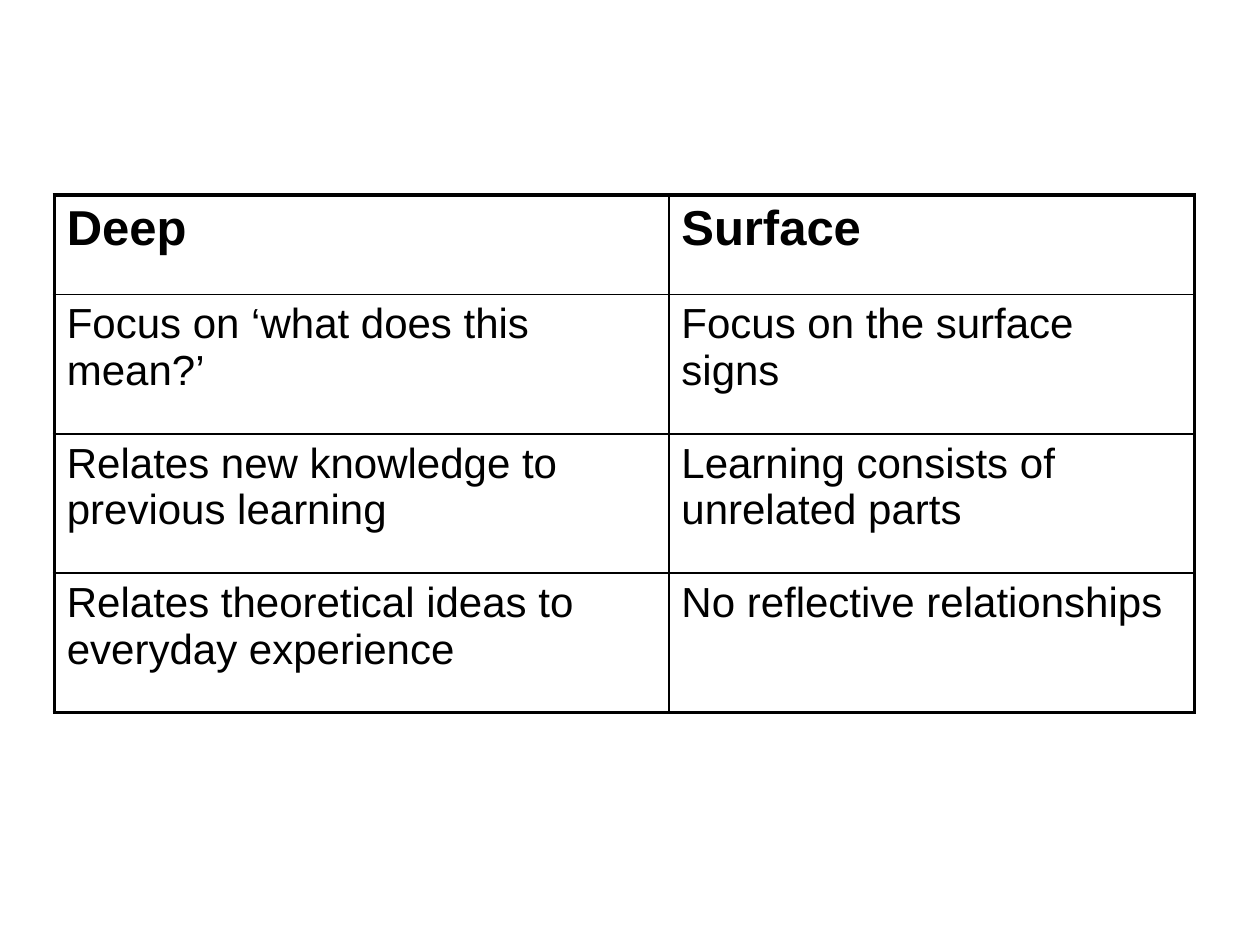
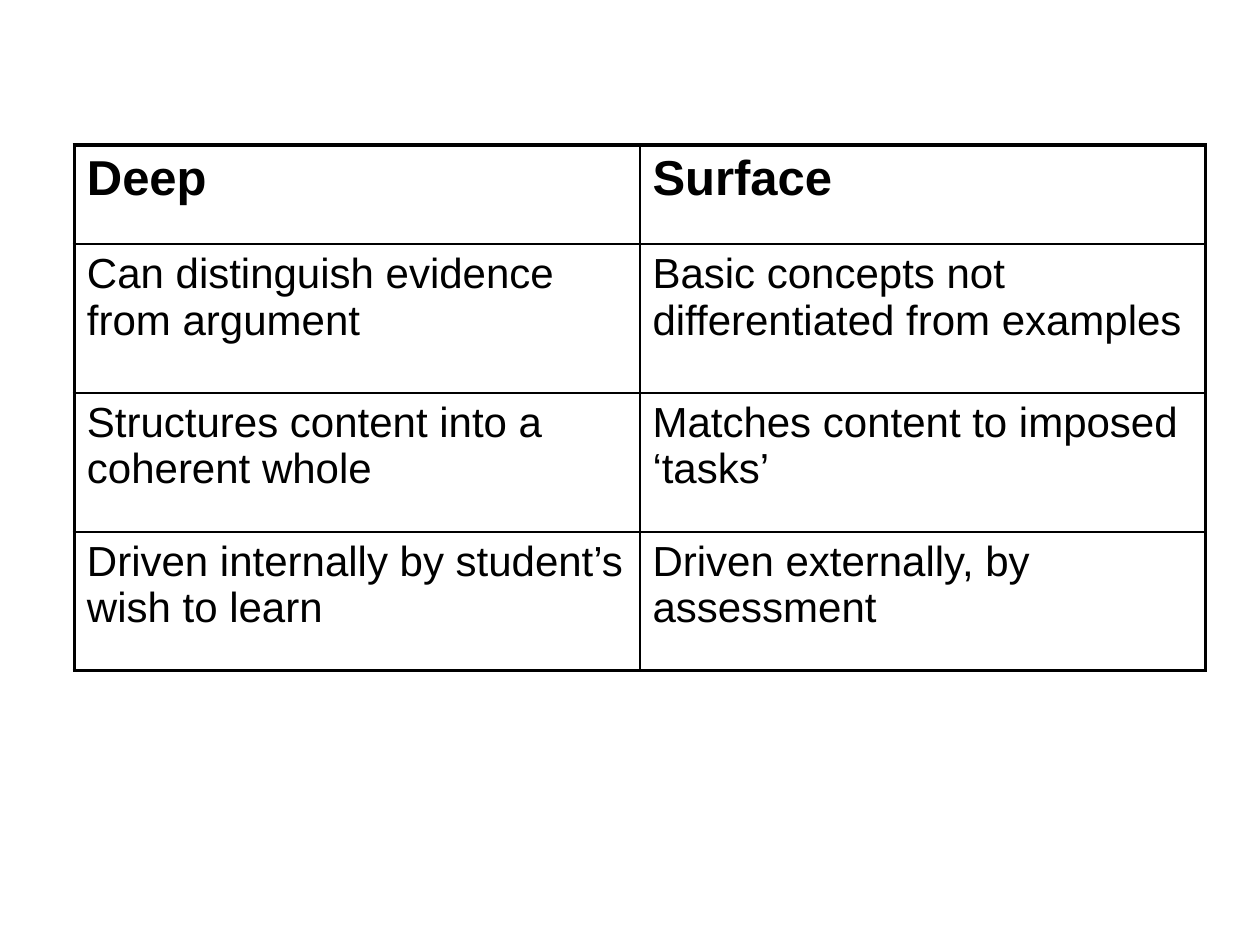
"""Build two slides that compare deep and surface learning in ruled tables."""
from dataclasses import dataclass

from lxml.etree import SubElement
from pptx import Presentation
from pptx.dml.color import RGBColor
from pptx.oxml.ns import qn
from pptx.util import Pt

HEADINGS = ("Deep", "Surface")

COMPARISONS = [
    {
        "corner": (31, 111.5),
        "widths": (351.2, 300.3),
        "heights": (56.7, 79.7, 79.7, 79.7),
        "contrasts": [
            ("Focus on ‘what does this mean?’", "Focus on the surface signs"),
            ("Relates new knowledge to previous learning",
             "Learning consists of unrelated parts"),
            ("Relates theoretical ideas to everyday experience",
             "No reflective relationships"),
        ],
    },
    {
        "corner": (42.5, 82.8),
        "widths": (323.2, 323.2),
        "heights": (56.7, 85, 79.4, 79.4),
        "contrasts": [
            ("Can distinguish evidence from argument",
             "Basic concepts not differentiated from examples"),
            ("Structures content into a coherent whole",
             "Matches content to imposed ‘tasks’"),
            ("Driven internally by student’s wish to learn",
             "Driven externally, by assessment"),
        ],
    },
]


@dataclass(frozen=True)
class Theme:
    font: str = "Arial"
    ink: str = "000000"
    heading_size: float = 28
    body_size: float = 24
    frame: float = 2.25
    rule: float = 1


THEME = Theme()


def rule_cell(cell, outer_edges):
    properties = cell._tc.get_or_add_tcPr()
    for edge, is_outer in outer_edges.items():
        weight = THEME.frame if is_outer else THEME.rule
        line = SubElement(properties, qn(f"a:ln{edge}"), w=str(Pt(weight)))
        ink = SubElement(line, qn("a:solidFill"))
        SubElement(ink, qn("a:srgbClr"), val=THEME.ink)
    cell.fill.background()


def write_cell(cell, wording, is_heading):
    cell.text_frame.text = wording
    font = cell.text_frame.paragraphs[0].runs[0].font
    font.name = THEME.font
    font.size = Pt(THEME.heading_size if is_heading else THEME.body_size)
    font.bold = is_heading
    font.color.rgb = RGBColor.from_string(THEME.ink)


def add_comparison(slide, corner, widths, heights, contrasts):
    rows = [HEADINGS, *contrasts]
    left, top = corner
    table = slide.shapes.add_table(
        len(rows), len(widths), Pt(left), Pt(top),
        Pt(sum(widths)), Pt(sum(heights))).table
    table.first_row = table.horz_banding = False
    for column, width in zip(table.columns, widths):
        column.width = Pt(width)
    for r, (wordings, height) in enumerate(zip(rows, heights)):
        table.rows[r].height = Pt(height)
        for c, wording in enumerate(wordings):
            cell = table.cell(r, c)
            write_cell(cell, wording, is_heading=r == 0)
            rule_cell(cell, {"L": c == 0, "R": c == len(widths) - 1,
                             "T": r == 0, "B": r == len(rows) - 1})


def main():
    deck = Presentation()
    deck.slide_width, deck.slide_height = Pt(720), Pt(540)
    blank = deck.slide_layouts[6]
    for comparison in COMPARISONS:
        add_comparison(deck.slides.add_slide(blank), **comparison)
    deck.save("out.pptx")


if __name__ == "__main__":
    main()
